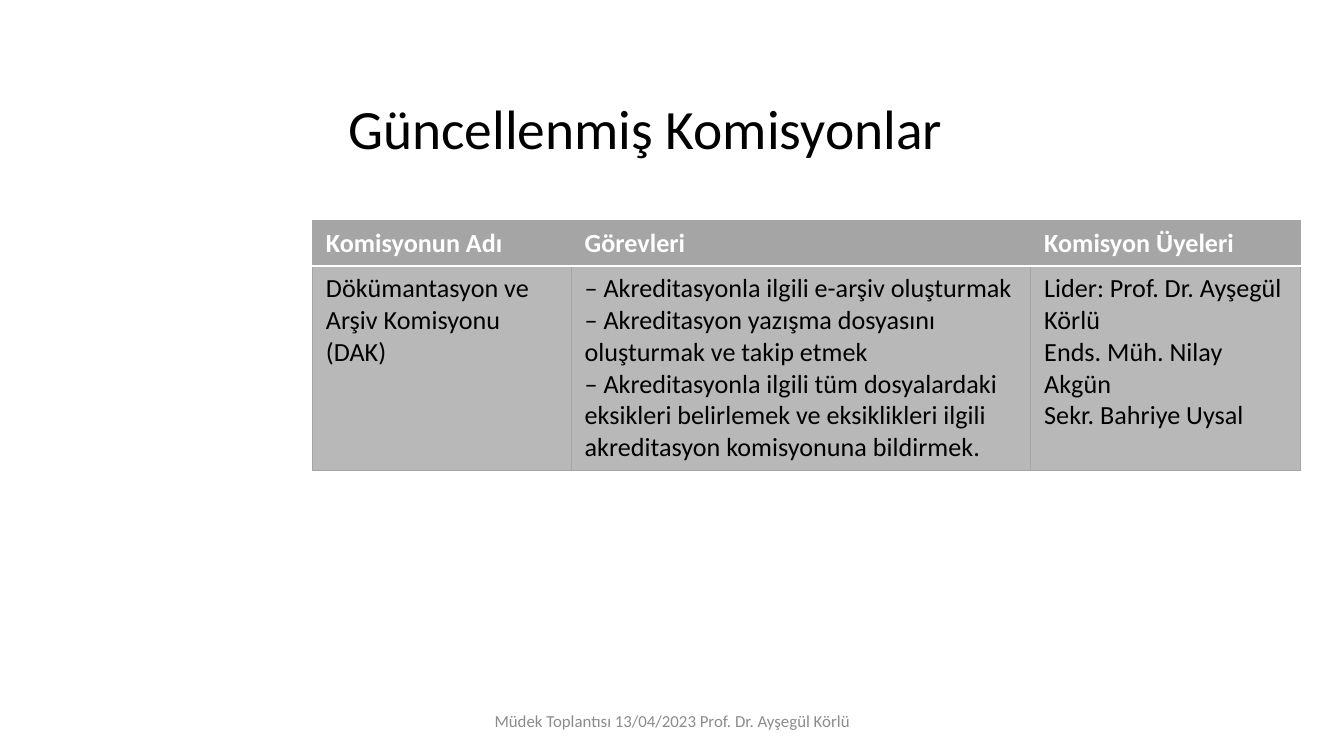
from dataclasses import dataclass

from lxml.etree import SubElement
from pptx import Presentation
from pptx.dml.color import RGBColor
from pptx.enum.text import MSO_ANCHOR, MSO_AUTO_SIZE, PP_ALIGN
from pptx.oxml.ns import qn
from pptx.util import Inches, Pt


@dataclass(frozen=True)
class Theme:
    font: str = "Calibri"
    ink: str = "000000"
    white: str = "FFFFFF"
    header: str = "A5A5A5"
    body: str = "B8B8B8"
    muted: str = "8C8C8C"
    title_size: float = 29.7
    table_size: float = 14
    footer_size: float = 9


theme = Theme()


def style(para, size, color, bold=False):
    para.font.name = theme.font
    para.font.size = Pt(size)
    para.font.bold = bold
    para.font.color.rgb = RGBColor.from_string(color)


def add_border(cell, side, color, width):
    line = SubElement(cell._tc.get_or_add_tcPr(), qn(f"a:{side}"), w=str(Pt(width)))
    fill = SubElement(line, qn("a:solidFill"))
    SubElement(fill, qn("a:srgbClr"), val=color)


deck = Presentation()
deck.slide_width = Inches(10)
deck.slide_height = deck.slide_width * 9 // 16
column, row = deck.slide_width / 100, Inches(0.01)
page = deck.slides.add_slide(deck.slide_layouts[5])

title = page.shapes.title
title.left, title.top = int(24.9 * column), int(81.5 * row)
title.width, title.height = int(70.1 * column), int(33 * row)
title.text_frame.text = "Güncellenmiş Komisyonlar"
title.text_frame.auto_size = MSO_AUTO_SIZE.NONE
title.text_frame.vertical_anchor = MSO_ANCHOR.MIDDLE
heading = title.text_frame.paragraphs[0]
heading.alignment = PP_ALIGN.LEFT
heading.line_spacing = 0.9
style(heading, theme.title_size, theme.ink)

commission_rows = [
    ["Komisyonun Adı", "Görevleri", "Komisyon Üyeleri"],
    [
        "Dökümantasyon ve Arşiv Komisyonu (DAK)",
        "– Akreditasyonla ilgili e-arşiv oluşturmak – Akreditasyon yazışma dosyasını "
        "oluşturmak ve takip etmek\n"
        "– Akreditasyonla ilgili tüm dosyalardaki eksikleri belirlemek ve eksiklikleri "
        "ilgili akreditasyon komisyonuna bildirmek.",
        "Lider: Prof. Dr. Ayşegül Körlü\nEnds. Müh. Nilay Akgün\nSekr. Bahriye Uysal",
    ],
]
column_shares = [19.25, 34.2, 20.05]
row_shares = [34, 152]
table = page.shapes.add_table(
    len(row_shares), len(column_shares), int(23.25 * column), int(164 * row),
    int(sum(column_shares) * column), int(sum(row_shares) * row),
).table
table.horz_banding = False
for table_column, share in zip(table.columns, column_shares):
    table_column.width = int(share * column)
for table_row, share in zip(table.rows, row_shares):
    table_row.height = int(share * row)

for row_index, texts in enumerate(commission_rows):
    is_header = row_index == 0
    for column_index, text in enumerate(texts):
        cell = table.cell(row_index, column_index)
        cell.text = text
        for para in cell.text_frame.paragraphs:
            style(para, theme.table_size, theme.white if is_header else theme.ink, is_header)
        for side in ("lnL", "lnR", "lnT", "lnB"):
            divides = side == ("lnB" if is_header else "lnT")
            add_border(cell, side, theme.white if divides else theme.header, 1 if divides else 0.5)
        cell.fill.solid()
        cell.fill.fore_color.rgb = RGBColor.from_string(theme.header if is_header else theme.body)

footer = page.shapes.add_textbox(
    int(33.1 * column), int(521.5 * row), int(33.8 * column), int(30 * row)
)
footer.text_frame.word_wrap = True
footer.text_frame.vertical_anchor = MSO_ANCHOR.MIDDLE
footer.text_frame.text = "Müdek Toplantısı 13/04/2023 Prof. Dr. Ayşegül Körlü"
footer_para = footer.text_frame.paragraphs[0]
footer_para.alignment = PP_ALIGN.CENTER
style(footer_para, theme.footer_size, theme.muted)

deck.save("out.pptx")
